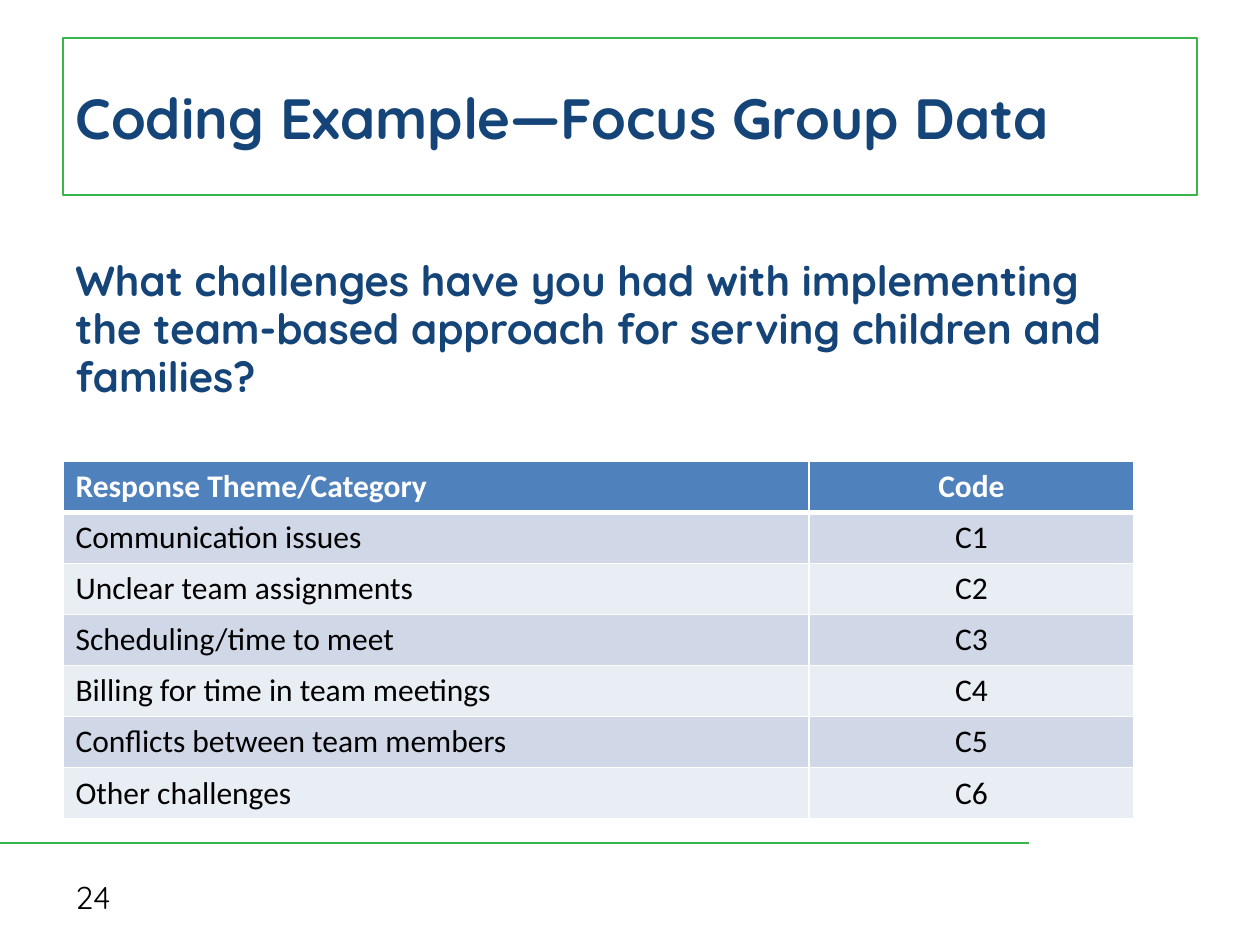
import pptx
import pptx.dml.color
import pptx.enum.shapes
import pptx.enum.text
import pptx.oxml
import pptx.oxml.ns
import pptx.util
from pptx.util import Inches

COLORS = {
    "green": "39B54A", "navy": "154578", "black": "000000", "white": "FFFFFF",
    "header": "4F81BD", "odd": "D0D8E8", "even": "E9EDF4",
}
HEADING = {"name": "Quicksand", "bold": True, "color": "navy"}
TITLE = {**HEADING, "size": 32.4}
QUESTION = {**HEADING, "size": 24}
NUMBER = {"name": "Quicksand", "bold": False, "size": 18, "color": "black"}
TABLE_HEAD = {"name": "Calibri", "bold": True, "size": 18, "color": "white"}
TABLE_BODY = {**TABLE_HEAD, "bold": False, "color": "black"}

THEMES = [
    "Communication issues", "Unclear team assignments",
    "Scheduling/time to meet", "Billing for time in team meetings",
    "Conflicts between team members", "Other challenges",
]
ALIGN = pptx.enum.text.PP_ALIGN
ANCHOR = pptx.enum.text.MSO_ANCHOR


def rgb(name):
    return pptx.dml.color.RGBColor.from_string(COLORS[name])


class SlideBuilder:
    def __init__(self, prs):
        self.s = prs.slides.add_slide(prs.slide_layouts.get_by_name("Title Only"))

    def fill_text(self, tf, text, style, align=ALIGN.LEFT):
        p = tf.paragraphs[0]
        p.alignment = align
        r = p.add_run()
        r.text = text
        for key, value in style.items():
            if key == "color":
                r.font.color.rgb = rgb(value)
            else:
                setattr(r.font, key, pptx.util.Pt(value) if key == "size" else value)
        return p

    def title(self, text, x, y, w, h):
        sp = self.s.shapes.title
        sp.left, sp.top, sp.width, sp.height = map(Inches, (x, y, w, h))
        sp.line.color.rgb = rgb("green")
        sp.line.width = pptx.util.Pt(1)
        tf = sp.text_frame
        tf.auto_size = pptx.enum.text.MSO_AUTO_SIZE.NONE
        tf.vertical_anchor = ANCHOR.MIDDLE
        self.fill_text(tf, text, TITLE)

    def text(self, text, x, y, w, h, style, anchor=ANCHOR.TOP, spacing=1.0):
        sp = self.s.shapes.add_textbox(*map(Inches, (x, y, w, h)))
        tf = sp.text_frame
        tf.word_wrap = True
        tf.vertical_anchor = anchor
        self.fill_text(tf, text, style).line_spacing = spacing

    def rule(self, x1, y1, x2, y2):
        line = self.s.shapes.add_connector(
            pptx.enum.shapes.MSO_CONNECTOR.STRAIGHT, *map(Inches, (x1, y1, x2, y2)))
        line.line.color.rgb = rgb("green")
        line.line.width = pptx.util.Pt(1.5)
        spPr = line._element.spPr
        spPr.append(spPr.makeelement(pptx.oxml.ns.qn("a:effectLst"), {}))

    def border(self, cell, side, width):
        cell._tc.get_or_add_tcPr().append(pptx.oxml.parse_xml(
            f'<a:ln{side} {pptx.oxml.ns.nsdecls("a")} w="{pptx.util.Pt(width)}">'
            f'<a:solidFill><a:srgbClr val="{COLORS["white"]}"/></a:solidFill>'
            f'</a:ln{side}>'))

    def table(self, rows, x, y, widths, height):
        table = self.s.shapes.add_table(
            len(rows), len(widths),
            *map(Inches, (x, y, sum(widths), height))).table
        for column, width in zip(table.columns, widths):
            column.width = Inches(width)
        for i, row in enumerate(rows):
            fill = "header" if i == 0 else "odd" if i % 2 else "even"
            for j, text in enumerate(row):
                cell = table.cell(i, j)
                # Borders must come before the fill in the cell properties.
                for side in "LRTB":
                    thick = (i, side) in ((0, "B"), (1, "T"))
                    self.border(cell, side, 3 if thick else 1)
                cell.fill.solid()
                cell.fill.fore_color.rgb = rgb(fill)
                self.fill_text(cell.text_frame, text, TABLE_BODY if i else TABLE_HEAD,
                               ALIGN.CENTER if j else ALIGN.LEFT)


def main():
    prs = pptx.Presentation()
    prs.slide_width, prs.slide_height = Inches(10), Inches(7.5)
    slide = SlideBuilder(prs)
    slide.rule(0, 6.69, 8.17, 6.69)
    slide.title("Coding Example—Focus Group Data", 0.5, 0.3, 9, 1.25)
    slide.text("24", 0.5, 6.92, 2.33, 0.4, NUMBER, ANCHOR.MIDDLE)
    rows = [("Response Theme/Category", "Code")]
    rows += [(theme, f"C{n}") for n, theme in enumerate(THEMES, 1)]
    slide.table(rows, 0.5, 3.66, (5.92, 2.58), 2.84)
    slide.text("What challenges have you had with implementing the team-based "
               "approach for serving children and families?",
               0.5, 2, 8.67, 1.31, QUESTION, spacing=0.95)
    prs.save("out.pptx")


if __name__ == "__main__":
    main()
